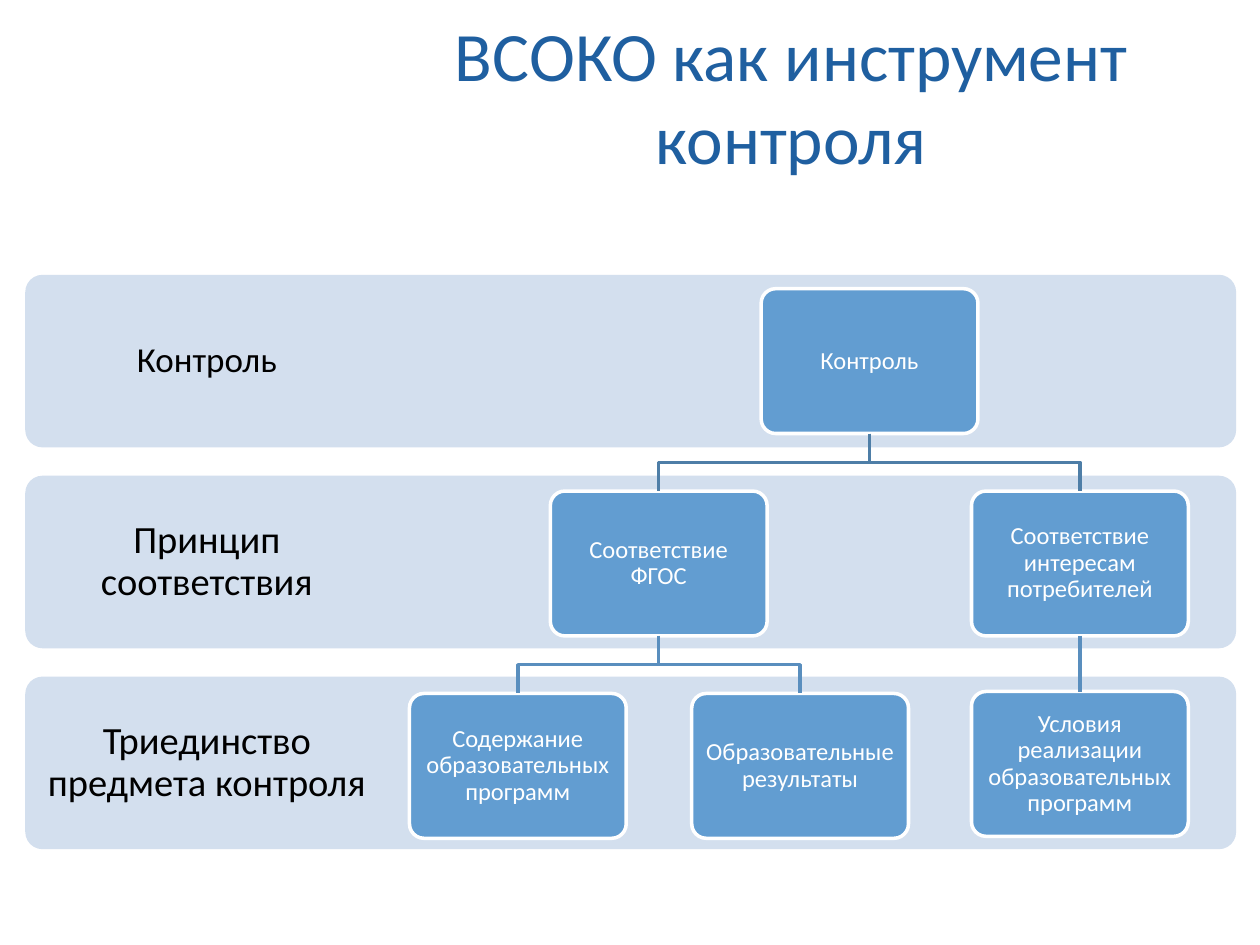
"""Build a slide with a three-level control hierarchy laid over labelled bands."""
from dataclasses import dataclass
from typing import Optional

import pptx
import pptx.dml.color
import pptx.enum.shapes
import pptx.enum.text
import pptx.oxml.ns
import pptx.util
from lxml import etree

Cm = pptx.util.Cm
Pt = pptx.util.Pt

COLORS = {
    "title": "1F5FA0",
    "band": "D3DFEE",
    "label": "000000",
    "box": "629DD1",
    "white": "FFFFFF",
    "upper_link": "4E7EA7",
    "lower_link": "598EBE",
}
FONT = "Calibri"
BAND_LEFT, BAND_TOP, BAND_WIDTH, BAND_HEIGHT, BAND_PITCH = 0.51, 5.54, 24.41, 3.48, 4.05
LABEL_WIDTH = 7.32
BOX_WIDTH, BOX_HEIGHT = 4.37, 2.92
CORNER = 0.1
LINE_WIDTH = Pt(2)


@dataclass(frozen=True)
class Band:
    label: str
    size: float
    inset: float


@dataclass(frozen=True)
class Node:
    text: str
    center: float
    top: float
    parent: Optional[int] = None
    link_color: str = "lower_link"


BANDS = [
    Band("Контроль", 20, 0.4),
    Band("Принцип соответствия", 22, 0.43),
    Band("Триединство предмета контроля", 22, 0.43),
]
NODES = [
    Node("Контроль", 17.53, 5.82),
    Node("Соответствие ФГОС", 13.28, 9.9, 0, "upper_link"),
    Node("Соответствие интересам потребителей", 21.77, 9.9, 0, "upper_link"),
    Node("Содержание образовательных программ", 10.44, 13.98, 1),
    Node("Образовательные результаты", 16.13, 13.98, 1),
    Node("Условия реализации образовательных программ", 21.77, 13.94, 2),
]


def rgb(name: str) -> pptx.dml.color.RGBColor:
    """Return the named colour."""
    return pptx.dml.color.RGBColor.from_string(COLORS[name])


def write(shape, text: str, size: float, color: str, inset: float, spacing: float = 0.9) -> None:
    """Put centred, wrapped text into a shape."""
    frame = shape.text_frame
    frame.word_wrap = True
    frame.vertical_anchor = pptx.enum.text.MSO_ANCHOR.MIDDLE
    frame.margin_left = frame.margin_right = Cm(inset)
    frame.margin_top = frame.margin_bottom = Cm(inset)
    frame.text = text
    paragraph = frame.paragraphs[0]
    paragraph.alignment = pptx.enum.text.PP_ALIGN.CENTER
    paragraph.line_spacing = spacing
    font = paragraph.runs[0].font
    font.name = FONT
    font.size = Pt(size)
    font.color.rgb = rgb(color)


def draw_rounded(slide, left: float, top: float, width: float, height: float, fill: str):
    """Draw a filled rounded rectangle without an outline."""
    shape = slide.shapes.add_shape(
        pptx.enum.shapes.MSO_SHAPE.ROUNDED_RECTANGLE, Cm(left), Cm(top), Cm(width), Cm(height)
    )
    shape.adjustments[0] = CORNER
    shape.shadow.inherit = False
    shape.fill.solid()
    shape.fill.fore_color.rgb = rgb(fill)
    shape.line.fill.background()
    return shape


def draw_band(slide, band: Band, row: int) -> None:
    """Draw one level band with its label."""
    top = BAND_TOP + row * BAND_PITCH
    draw_rounded(slide, BAND_LEFT, top, BAND_WIDTH, BAND_HEIGHT, "band")
    label = slide.shapes.add_textbox(Cm(BAND_LEFT), Cm(top), Cm(LABEL_WIDTH), Cm(BAND_HEIGHT))
    write(label, band.label, band.size, "label", band.inset)


def draw_node(slide, node: Node):
    """Draw one box of the hierarchy."""
    box = draw_rounded(
        slide, node.center - BOX_WIDTH / 2, node.top, BOX_WIDTH, BOX_HEIGHT, "box"
    )
    box.line.color.rgb = rgb("white")
    box.line.width = LINE_WIDTH
    write(box, node.text, 14, "white", 0.15)
    return box


def draw_straight_link(slide, parent_box, child_box):
    """Join two boxes that stand one under the other."""
    link = slide.shapes.add_connector(pptx.enum.shapes.MSO_CONNECTOR.STRAIGHT, 0, 0, 0, 0)
    link.begin_connect(parent_box, 2)
    link.end_connect(child_box, 0)
    properties = link._element.find(pptx.oxml.ns.qn("p:spPr"))
    etree.SubElement(properties, pptx.oxml.ns.qn("a:effectLst"))
    return link


def draw_elbow_link(slide, parent: Node, child: Node):
    """Draw a stepped line from a parent to a child beside it."""
    start = parent.top + BOX_HEIGHT
    middle = (start + child.top) / 2
    corners = [(parent.center, middle), (child.center, middle), (child.center, child.top)]
    builder = slide.shapes.build_freeform(Cm(parent.center), Cm(start))
    builder.add_line_segments([(Cm(x), Cm(y)) for x, y in corners], close=False)
    link = builder.convert_to_shape()
    link.shadow.inherit = False
    link.fill.background()
    return link


def draw_hierarchy(slide, nodes: list[Node]) -> None:
    """Draw all boxes and the links between them."""
    boxes = [draw_node(slide, node) for node in nodes]
    for node, box in zip(nodes, boxes):
        if node.parent is None:
            continue
        parent = nodes[node.parent]
        if parent.center == node.center:
            link = draw_straight_link(slide, boxes[node.parent], box)
        else:
            link = draw_elbow_link(slide, parent, node)
        link.line.color.rgb = rgb(node.link_color)
        link.line.width = LINE_WIDTH


def main() -> None:
    """Build and save the slide."""
    presentation = pptx.Presentation()
    presentation.slide_width = Cm(25.4)
    presentation.slide_height = Cm(19.05)
    slide = presentation.slides.add_slide(presentation.slide_layouts[6])
    title = slide.shapes.add_textbox(Cm(6.5), Cm(0.33), Cm(18.9), Cm(3.2))
    write(title, "ВСОКО как инструмент контроля", 39.6, "title", 0.25, 1.0)
    for row, band in enumerate(BANDS):
        draw_band(slide, band, row)
    draw_hierarchy(slide, NODES)
    presentation.save("out.pptx")


if __name__ == "__main__":
    main()
